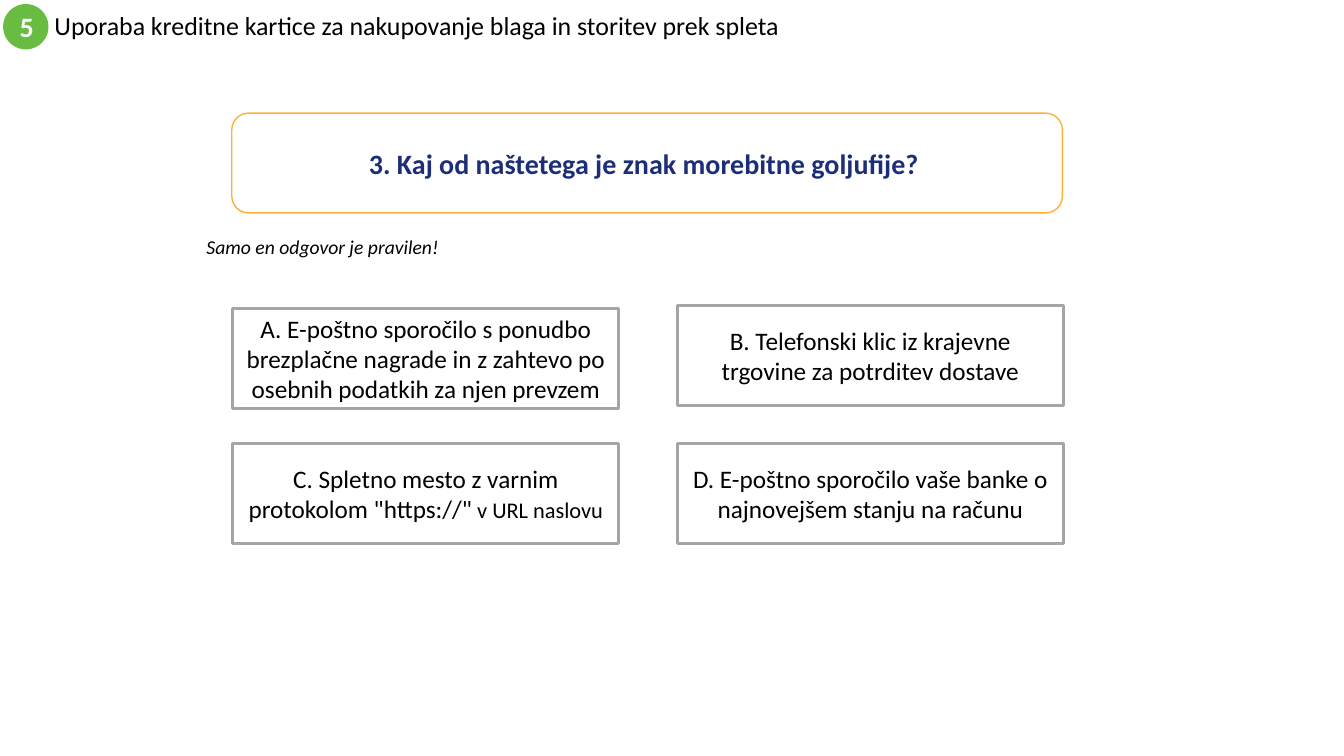
from dataclasses import dataclass

from pptx import Presentation
from pptx.dml.color import RGBColor as Color
from pptx.enum.shapes import MSO_SHAPE as Shape
from pptx.enum.text import MSO_ANCHOR as Anchor, MSO_AUTO_SIZE as AutoSize, PP_ALIGN as Align
from pptx.util import Pt


@dataclass(frozen=True)
class Theme:
    font: str = "Calibri"
    black: str = "000000"
    white: str = "FFFFFF"
    navy: str = "1C2E78"
    green: str = "68BC42"
    orange: str = "FCB13A"
    grey: str = "A5A5A5"
    title_size: float = 18.5
    heading_size: float = 20
    answer_size: float = 18
    detail_size: float = 16
    hint_size: float = 14


class QuizPage:
    def __init__(self, deck, theme):
        self.theme = theme
        self.page = deck.slides.add_slide(deck.slide_layouts[5])

    def set_text(self, box, spans, color, align=Align.CENTER, anchor=Anchor.MIDDLE,
                 bold=False, italic=False):
        """Fill a box with one paragraph made of (text, size) spans."""
        frame = box.text_frame
        frame.word_wrap = True
        frame.auto_size = AutoSize.NONE
        frame.vertical_anchor = anchor
        frame.margin_left = frame.margin_right = Pt(7.2)
        frame.margin_top = frame.margin_bottom = Pt(3.6)
        para = frame.paragraphs[0]
        para.alignment = align
        for text, size in spans:
            span = para.add_run()
            span.text = text
            font = span.font
            font.name, font.size = self.theme.font, Pt(size)
            font.bold, font.italic = bold, italic
            font.color.rgb = Color.from_string(color)
        return para

    def title(self, text, left, top, width, height):
        box = self.page.shapes.title
        box.left, box.top, box.width, box.height = map(Pt, (left, top, width, height))
        para = self.set_text(box, [(text, self.theme.title_size)], self.theme.black, Align.LEFT)
        para.line_spacing = 0.9

    def panel(self, kind, bounds, spans, fill, color, line=None, line_width=1, bold=False):
        box = self.page.shapes.add_shape(kind, *map(Pt, bounds))
        box.shadow.inherit = False
        box.fill.solid()
        box.fill.fore_color.rgb = Color.from_string(fill)
        if line:
            box.line.color.rgb = Color.from_string(line)
            box.line.width = Pt(line_width)
        else:
            box.line.fill.background()
        self.set_text(box, spans, color, bold=bold)

    def hint(self, text, left, top, width, height):
        box = self.page.shapes.add_textbox(Pt(left), Pt(top), Pt(width), Pt(height))
        self.set_text(box, [(text, self.theme.hint_size)], self.theme.black,
                      Align.LEFT, Anchor.TOP, italic=True)


def main():
    deck = Presentation()
    deck.slide_width, deck.slide_height = Pt(960), Pt(540)
    theme = Theme()
    quiz = QuizPage(deck, theme)

    # Header with chapter number
    quiz.title("Uporaba kreditne kartice za nakupovanje blaga in storitev prek spleta",
               31.7, 2.9, 576, 32.4)
    quiz.panel(Shape.OVAL, (2.2, 2.9, 32.4, 32.4), [("5", theme.heading_size)],
               theme.green, theme.white, bold=True)

    # Question and hint
    quiz.panel(Shape.ROUNDED_RECTANGLE, (165.6, 80.8, 593.3, 71.3),
               [("3. Kaj od naštetega je znak morebitne goljufije? ", theme.heading_size)],
               theme.white, theme.navy, theme.orange, bold=True)
    quiz.hint("Samo en odgovor je pravilen!", 140.4, 164.2, 195.8, 41)

    # Answers: two columns, with B slightly higher than A
    left, right, lower = 166.3, 483.8, 316.8
    size = theme.answer_size
    answers = [
        (left, 220.3, [("A. E-poštno sporočilo s ponudbo brezplačne nagrade in z zahtevo "
                        "po osebnih podatkih za njen prevzem", size)]),
        (right, 218.2, [("B. Telefonski klic iz krajevne trgovine za potrditev dostave", size)]),
        (left, lower, [('C. Spletno mesto z varnim protokolom "https://"', size),
                       (" v URL naslovu", theme.detail_size)]),
        (right, lower, [("D. E-poštno sporočilo vaše banke o najnovejšem stanju na računu", size)]),
    ]
    for x, y, spans in answers:
        quiz.panel(Shape.RECTANGLE, (x, y, 275.8, 71.3), spans,
                   theme.white, theme.black, theme.grey, line_width=2)

    deck.save("out.pptx")


if __name__ == "__main__":
    main()
